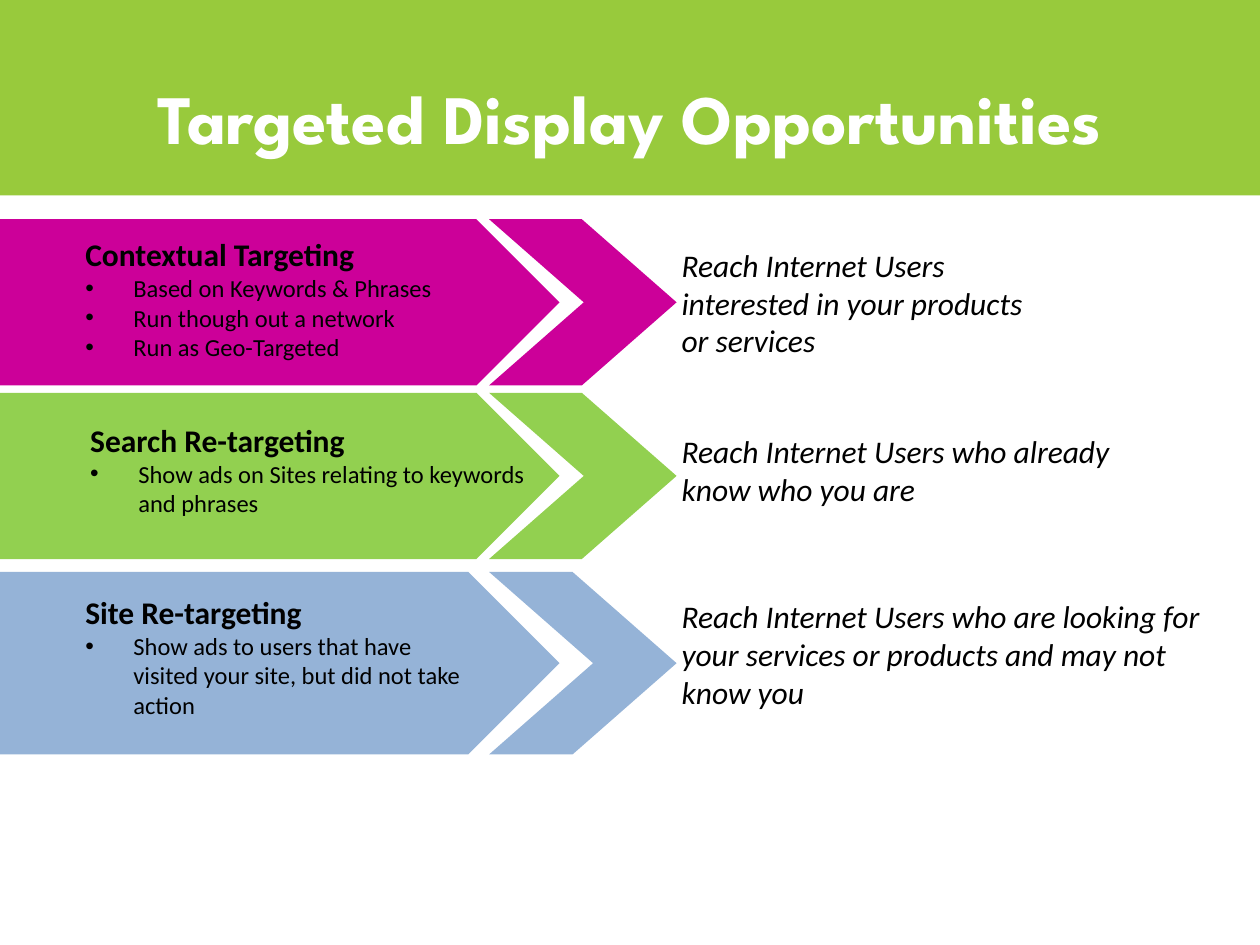
from dataclasses import dataclass

from lxml.etree import SubElement
from pptx import Presentation
from pptx.dml.color import RGBColor
from pptx.enum.shapes import MSO_SHAPE as Shape
from pptx.enum.text import MSO_ANCHOR as Anchor, MSO_AUTO_SIZE as AutoSize, PP_ALIGN as Align
from pptx.oxml.ns import qn
from pptx.util import Cm, Pt

LIME = RGBColor(0x98, 0xCA, 0x3C)
MAGENTA = RGBColor(0xCC, 0x00, 0x99)
GREEN = RGBColor(0x92, 0xD0, 0x50)
BLUE = RGBColor(0x95, 0xB3, 0xD7)
BLACK = RGBColor(0x00, 0x00, 0x00)
WHITE = RGBColor(0xFF, 0xFF, 0xFF)

HEADING = {"name": "Calibri", "size": Pt(18), "bold": True}
BULLET = {"name": "Calibri", "size": Pt(14), "bold": False}
REACH = {"name": "Calibri", "size": Pt(18), "italic": True}
TITLE = {"name": "League Spartan", "size": Pt(39.6), "bold": True}

PAGE_WIDTH, PAGE_HEIGHT = 25.4, 19.05
PLATE_WIDTH = 11.28
CHEVRON_LEFT, CHEVRON_WIDTH = 9.86, 3.78
REACH_LEFT, REACH_WIDTH, REACH_HEIGHT = 13.49, 11.2, 2.57
HANGING = Cm(0.97)


@dataclass
class Row:
    """One targeting method; text boxes are offset from the row's top."""
    top: float
    height: float
    color: RGBColor
    heading: str
    bullets: list
    text_box: tuple
    reach: list
    reach_offset: float
    heading_spacing: float = 1.0


ROWS = [
    Row(4.42, 3.35, MAGENTA, "Contextual Targeting",
        ["Based on Keywords & Phrases", "Run though out a network", "Run as Geo-Targeted"],
        (1.47, -0.18, 7.54, 3.2),
        ["Reach Internet Users \vinterested in your products", "or services"], 0.41, 1.5),
    Row(7.92, 3.35, GREEN, "Search Re-targeting",
        ["Show ads on Sites relating to keywords and phrases"],
        (1.57, 0.44, 9.65, 2.24),
        ["Reach Internet Users who already", "know who you are"], 0.67),
    Row(11.53, 3.68, BLUE, "Site Re-targeting",
        ["Show ads to users that have visited your site, but did not take action"],
        (1.47, 0.3, 8.28, 4.04),
        ["Reach Internet Users who are looking for your services or products "
         "and may not know you"], 0.38),
]


def write(para, text, style, color=BLACK):
    """Put styled text in a paragraph."""
    para.text = text
    for span in para.runs:
        for name, value in style.items():
            setattr(span.font, name, value)
        span.font.color.rgb = color


def add_bullet(para):
    """Give a paragraph a hanging round bullet."""
    props = para._p.get_or_add_pPr()
    props.set("marL", str(HANGING))
    props.set("indent", str(-HANGING))
    SubElement(props, qn("a:buFont"), typeface="Arial")
    SubElement(props, qn("a:buChar"), char="•")


def add_block(shapes, kind, left, top, width, height, color):
    """Add a flat filled shape without outline."""
    block = shapes.add_shape(kind, Cm(left), Cm(top), Cm(width), Cm(height))
    block.shadow.inherit = False
    block.fill.solid()
    block.fill.fore_color.rgb = color
    block.line.fill.background()
    return block


def add_text(shapes, left, top, width, height, lines):
    """Add a wrapping text box with (text, style) lines and return it."""
    box = shapes.add_textbox(Cm(left), Cm(top), Cm(width), Cm(height))
    frame = box.text_frame
    frame.word_wrap = True
    for index, (text, style) in enumerate(lines):
        para = frame.add_paragraph() if index else frame.paragraphs[0]
        if style is BULLET:
            add_bullet(para)
        write(para, text, style)
    return box


def add_header(page):
    """Place the title over a full-width band."""
    title = page.shapes.title
    band = add_block(page.shapes, Shape.RECTANGLE, 0, 0, PAGE_WIDTH, 3.94, LIME)
    title.element.addprevious(band.element)
    title.left, title.top, title.width, title.height = Cm(1.27), Cm(0.76), Cm(22.86), Cm(3.18)
    frame = title.text_frame
    frame.auto_size = AutoSize.NONE
    frame.vertical_anchor = Anchor.MIDDLE
    para = frame.paragraphs[0]
    para.alignment = Align.CENTER
    write(para, "Targeted Display Opportunities", TITLE, WHITE)


def add_row(page, row):
    """Place a row's arrow group and the audience text beside it."""
    shapes = page.shapes.add_group_shape().shapes
    add_block(shapes, Shape.PENTAGON, 0, row.top, PLATE_WIDTH, row.height, row.color)
    chevron = add_block(shapes, Shape.CHEVRON, CHEVRON_LEFT, row.top,
                        CHEVRON_WIDTH, row.height, row.color)
    chevron.adjustments[0] = 0.57
    left, offset, width, height = row.text_box
    lines = [(row.heading, HEADING)] + [(text, BULLET) for text in row.bullets]
    box = add_text(shapes, left, row.top + offset, width, height, lines)
    if row.heading_spacing != 1:
        box.text_frame.paragraphs[0].line_spacing = row.heading_spacing
    add_text(page.shapes, REACH_LEFT, row.top + row.reach_offset, REACH_WIDTH, REACH_HEIGHT,
             [(text, REACH) for text in row.reach])


def main():
    """Build and save the deck."""
    deck = Presentation()
    deck.slide_width, deck.slide_height = Cm(PAGE_WIDTH), Cm(PAGE_HEIGHT)
    page = deck.slides.add_slide(deck.slide_layouts.get_by_name("Title Only"))
    add_header(page)
    for row in ROWS:
        add_row(page, row)
    deck.save("out.pptx")


if __name__ == "__main__":
    main()
